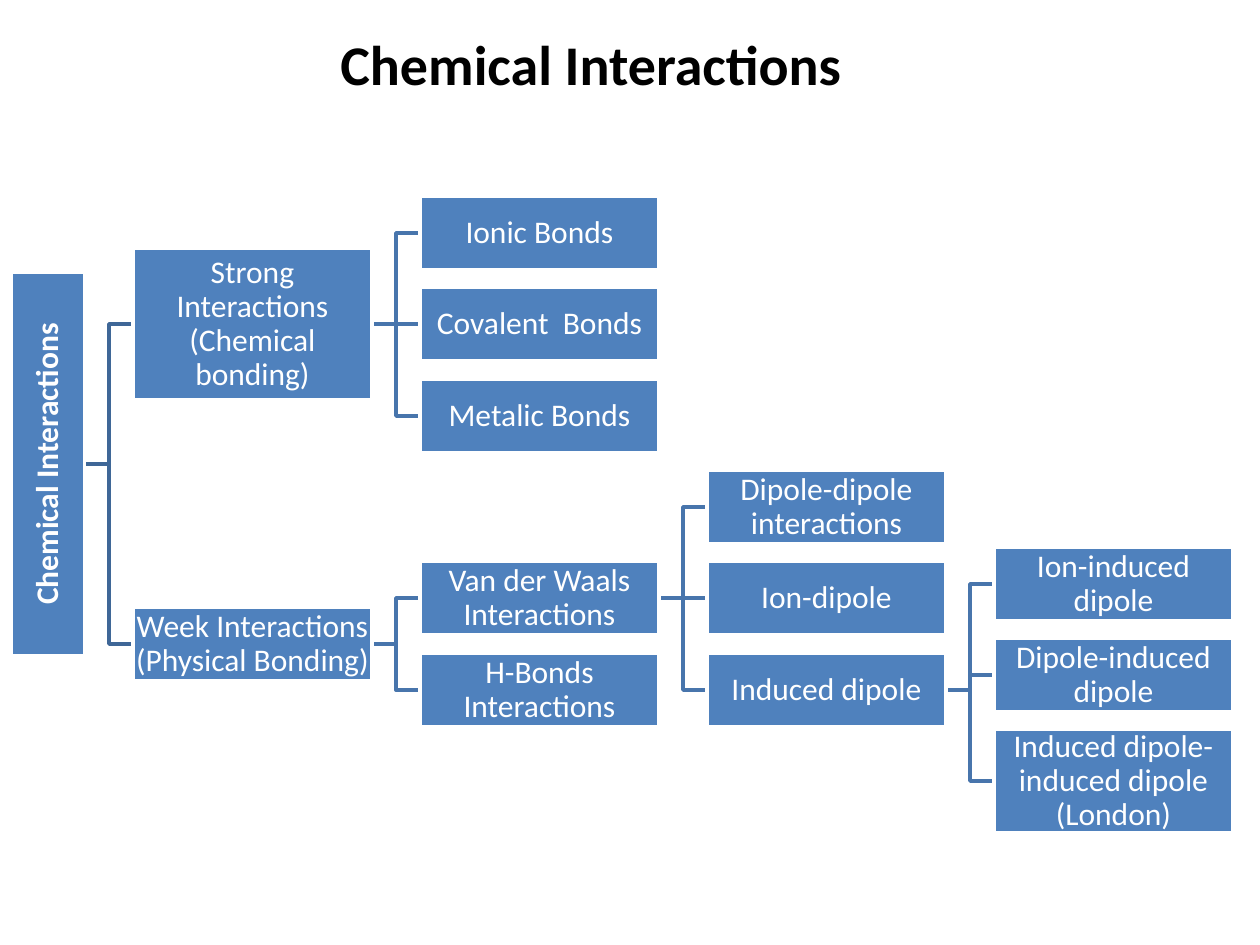
from pptx import Presentation
from pptx.dml.color import RGBColor
from pptx.enum.shapes import MSO_CONNECTOR, MSO_SHAPE
from pptx.enum.text import MSO_ANCHOR, MSO_AUTO_SIZE, PP_ALIGN
from pptx.util import Pt
from lxml.etree import SubElement
from pptx.oxml.ns import qn

SCALE = 914400 / 126  # EMU per px
COLORS = {"box": "4F81BD", "white": "FFFFFF", "black": "000000",
          "root_link": "3F6797", "link": "4875AC"}
COLUMN_LEFT, COLUMN_PITCH, LINK_WIDTH = 133, 287, 48
BOX_WIDTH, BOX_HEIGHT = 239, 73
ROOT_CENTER, ROOT_LENGTH = (48, 464), 384


def emu(px):
    return round(px * SCALE)


def style_run(para, size, color, bold=False):
    font = para.runs[0].font
    font.name, font.size, font.bold = "Calibri", Pt(size), bold
    font.color.rgb = RGBColor.from_string(COLORS[color])


deck = Presentation()
deck.slide_width, deck.slide_height = emu(1260), emu(945)
page = deck.slides.add_slide(deck.slide_layouts[6])
shapes = page.shapes

# Tree: text, parent, column, vertical centre, height
nodes = [
    ("Strong Interactions (Chemical bonding)", None, 0, 324, 152),
    ("Ionic Bonds", "Strong", 1, 233, BOX_HEIGHT),
    ("Covalent  Bonds", "Strong", 1, 324, BOX_HEIGHT),
    ("Metalic Bonds", "Strong", 1, 416, BOX_HEIGHT),
    ("Week Interactions (Physical Bonding)", None, 0, 644, BOX_HEIGHT),
    ("Van der Waals Interactions", "Week", 1, 598, BOX_HEIGHT),
    ("Dipole-dipole interactions", "Van", 2, 507, BOX_HEIGHT),
    ("Ion-dipole", "Van", 2, 598, BOX_HEIGHT),
    ("Induced dipole", "Van", 2, 690, BOX_HEIGHT),
    ("Ion-induced dipole", "Induced", 3, 584, BOX_HEIGHT),
    ("Dipole-induced dipole", "Induced", 3, 675, BOX_HEIGHT),
    ("Induced dipole-induced dipole (London)", "Induced", 3, 781, 103),
    ("H-Bonds Interactions", "Week", 1, 690, BOX_HEIGHT),
]
parent_centers = {None: ROOT_CENTER[1]}
for text, parent, column, center, height in nodes:
    parent_centers.setdefault(text.split()[0], center)

# Links, behind the boxes
for text, parent, column, center, height in nodes:
    end = COLUMN_LEFT + column * COLUMN_PITCH
    start, middle = end - LINK_WIDTH, end - LINK_WIDTH // 2
    origin = parent_centers[parent]
    if origin == center:
        link = shapes.add_connector(MSO_CONNECTOR.STRAIGHT, emu(start),
                                    emu(origin), emu(end), emu(center))
        SubElement(link._element.spPr, qn("a:effectLst"))
    else:
        outline = shapes.build_freeform(start, origin, scale=SCALE)
        outline.add_line_segments(
            [(middle, origin), (middle, center), (end, center)], close=False)
        link = outline.convert_to_shape()
        link.fill.background()
        link.shadow.inherit = False
    link.line.width = Pt(2)
    color = "link" if parent else "root_link"
    link.line.color.rgb = RGBColor.from_string(COLORS[color])

# Boxes: the turned root, then the tree
boxes = [("Chemical Interactions", *ROOT_CENTER, ROOT_LENGTH, BOX_HEIGHT, 270)]
for text, parent, column, center, height in nodes:
    middle = COLUMN_LEFT + column * COLUMN_PITCH + BOX_WIDTH / 2
    boxes.append((text, middle, center, BOX_WIDTH, height, 0))

for text, x, y, width, height, rotation in boxes:
    box = shapes.add_shape(MSO_SHAPE.RECTANGLE, emu(x - width / 2),
                           emu(y - height / 2), emu(width), emu(height))
    box.rotation = rotation
    box.shadow.inherit = False
    box.fill.solid()
    box.fill.fore_color.rgb = RGBColor.from_string(COLORS["box"])
    box.line.color.rgb = RGBColor.from_string(COLORS["white"])
    box.line.width = Pt(2)
    frame = box.text_frame
    frame.text = text
    frame.word_wrap = True
    frame.vertical_anchor = MSO_ANCHOR.MIDDLE
    frame.margin_left = frame.margin_right = emu(1)
    frame.margin_top = frame.margin_bottom = emu(1)
    para = frame.paragraphs[0]
    para.alignment = PP_ALIGN.CENTER
    para.line_spacing = 0.9
    style_run(para, 18, "white", bold=rotation != 0)

# Title
title = shapes.add_textbox(emu(328), emu(23), emu(532), emu(81))
title.text_frame.text = "Chemical Interactions"
title.text_frame.word_wrap = False
title.text_frame.auto_size = MSO_AUTO_SIZE.SHAPE_TO_FIT_TEXT
style_run(title.text_frame.paragraphs[0], 32, "black", bold=True)

deck.save("out.pptx")
